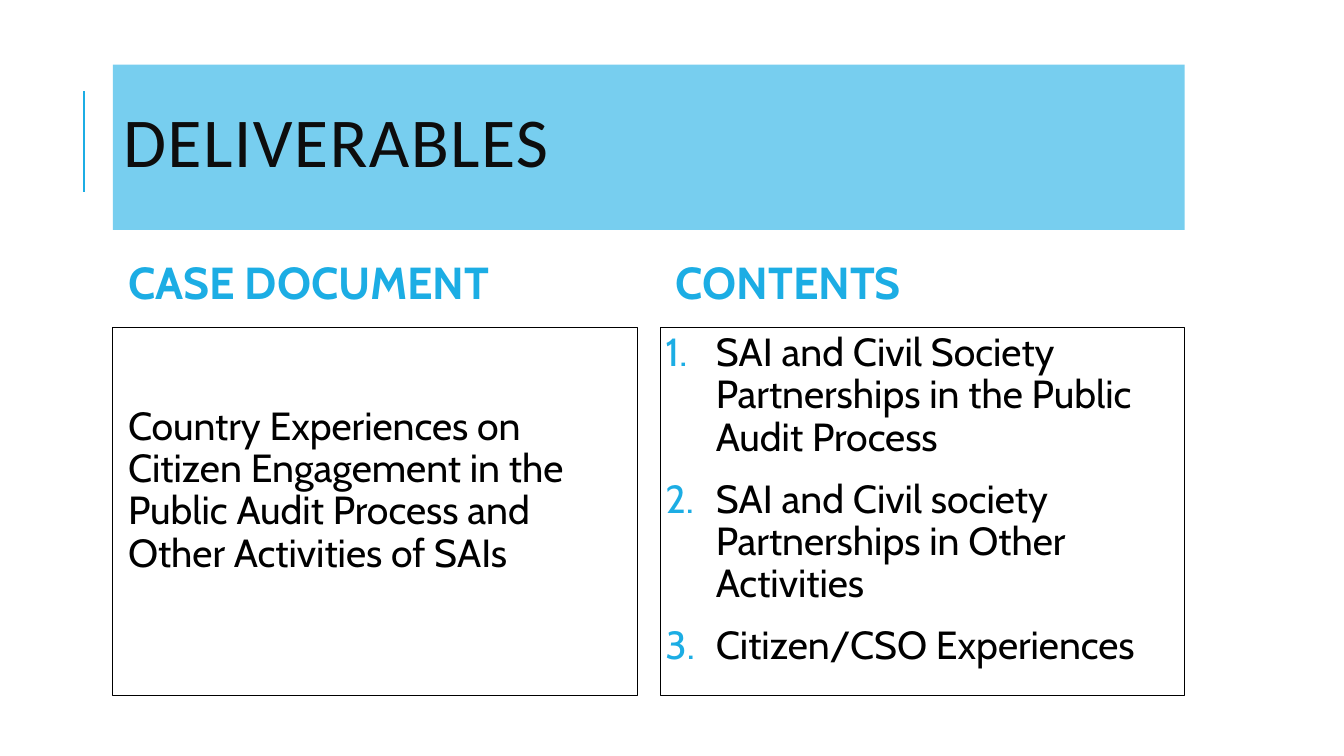
from lxml import etree
from pptx import Presentation
from pptx.dml.color import RGBColor
from pptx.enum.shapes import MSO_CONNECTOR, MSO_SHAPE
from pptx.enum.text import MSO_ANCHOR, MSO_AUTO_SIZE, PP_ALIGN
from pptx.oxml.ns import qn
from pptx.util import Inches, Pt

SKY = RGBColor(0x77, 0xCE, 0xEF)
BLUE = RGBColor(0x1C, 0xAD, 0xE4)
INK = RGBColor(0x0D, 0x0D, 0x0D)
BLACK = RGBColor(0, 0, 0)
STRAIGHT = MSO_CONNECTOR.STRAIGHT
RECT = MSO_SHAPE.RECTANGLE
MIDDLE, TOP = MSO_ANCHOR.MIDDLE, MSO_ANCHOR.TOP
LEFT = PP_ALIGN.LEFT
FIXED = MSO_AUTO_SIZE.NONE


def set_frame(shape, anchor, side, top):
    frame = shape.text_frame
    frame.word_wrap = True
    frame.auto_size = FIXED
    frame.vertical_anchor = anchor
    frame.margin_left = frame.margin_right = Inches(side)
    frame.margin_top, frame.margin_bottom = Inches(top), Inches(0.05)
    return frame


def add_text(para, text, face, size, color, space, bold=False):
    para.alignment = LEFT
    para.line_spacing = space
    run = para.add_run()
    run.text = text
    run.font.name = face
    run.font.size = Pt(size)
    run.font.color.rgb = color
    run.font.bold = bold
    return run


deck = Presentation()
deck.slide_width, deck.slide_height = Inches(13.33), Inches(7.5)
slide = deck.slides.add_slide(deck.slide_layouts[5])
shapes = slide.shapes

rule = shapes.add_connector(
    STRAIGHT, Inches(0.83), Inches(1.9), Inches(0.83), Inches(0.9))
rule.line.color.rgb = BLUE
rule.line.width = Pt(1.5)
etree.SubElement(rule._element.spPr, qn("a:effectLst"))

title = shapes.title
title.left, title.top = Inches(1.12), Inches(0.64)
title.width, title.height = Inches(10.63), Inches(1.64)
title.fill.solid()
title.fill.fore_color.rgb = SKY
frame = set_frame(title, MIDDLE, 0.1, 0.05)
run = add_text(frame.paragraphs[0], "DELIVERABLES", "Calibri", 50, INK, 0.8)
run._r.get_or_add_rPr().set("spc", "100")

columns = [
    (1.12, "CASE DOCUMENT", 0.15, 0.78, False, [
        "Country Experiences on Citizen Engagement in the Public Audit "
        "Process and Other Activities of SAIs"]),
    (6.55, "CONTENTS", 0.05, 0.05, True, [
        "SAI and Civil Society Partnerships in the Public Audit Process",
        "SAI and Civil society Partnerships in Other Activities",
        "Citizen/CSO Experiences"]),
]

for left, head, side, top, listed, items in columns:
    label = shapes.add_textbox(
        Inches(left), Inches(2.38), Inches(5.2), Inches(0.9))
    frame = set_frame(label, MIDDLE, 0.15, 0.05)
    add_text(frame.paragraphs[0], head, "Cabin", 32, BLUE, 0.9, True)

    box = shapes.add_shape(
        RECT, Inches(left), Inches(3.25), Inches(5.2), Inches(3.65))
    box.shadow.inherit = False
    box.fill.background()
    box.line.color.rgb = BLACK
    box.line.width = Pt(0.75)
    frame = set_frame(box, TOP, side, top)
    frame.margin_right = Inches(0.05)
    for index, item in enumerate(items):
        para = frame.add_paragraph() if index else frame.paragraphs[0]
        add_text(para, item, "Cabin", 28, BLACK, 0.9)
        para.space_before = Pt(12 if index else 0)
        para.space_after = Pt(2)
        if listed:
            props = para._p.get_or_add_pPr()
            props.set("marL", str(Inches(0.5)))
            props.set("indent", str(-Inches(0.5)))
            tint = etree.SubElement(props, qn("a:buClr"))
            etree.SubElement(tint, qn("a:srgbClr"), val=str(BLUE))
            etree.SubElement(props, qn("a:buFont"), typeface="Cabin")
            etree.SubElement(props, qn("a:buAutoNum"), type="arabicPeriod")

deck.save("out.pptx")
